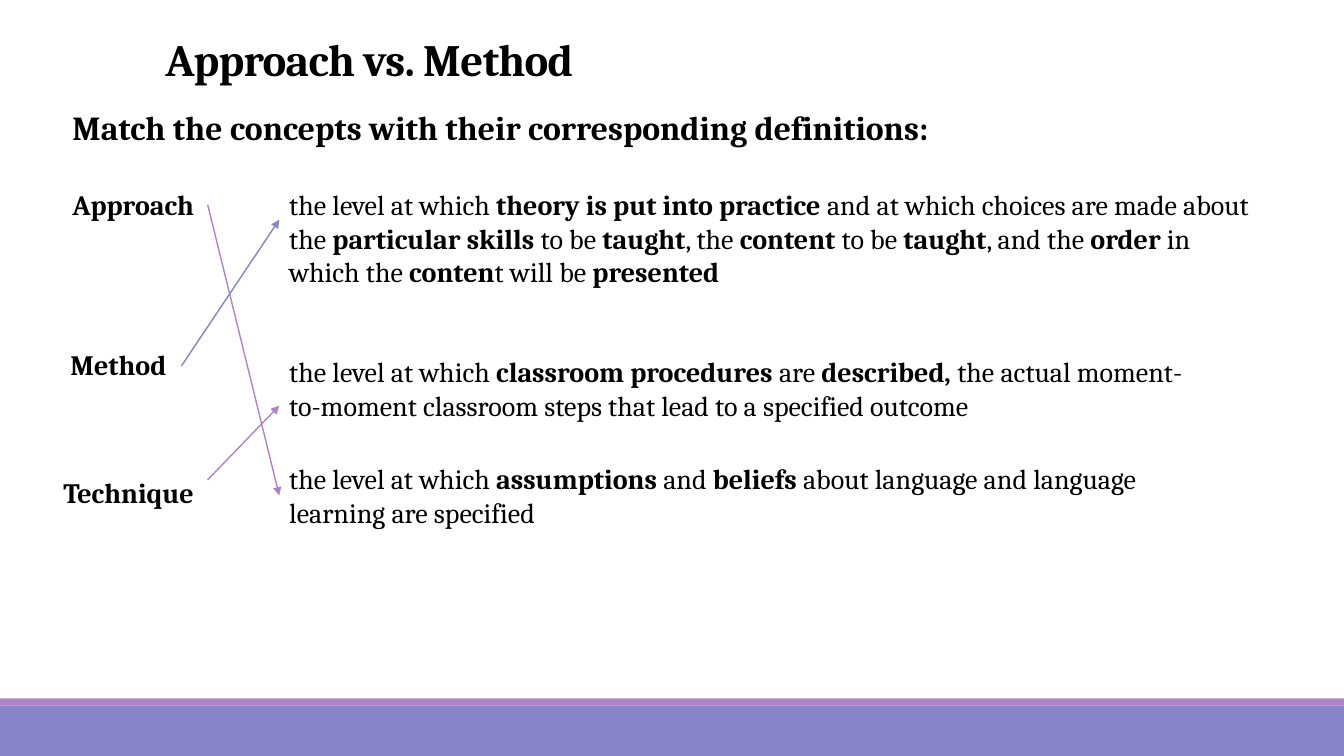
from lxml import etree
from pptx import Presentation
from pptx import util as u
from pptx.dml import color
from pptx.enum import shapes, text
from pptx.oxml import ns

FONT = "Cambria"
BLACK, BLUE, PURPLE = "000000", "8784C7", "AD84C6"

CONCEPTS = {
    "Approach": (0.62, 1.81, 1.44, 0.44),
    "Method": (0.6, 3.4, 1.36, 0.44),
    "Technique": (0.53, 4.67, 1.54, 0.44),
}
DEFINITIONS = {
    "Method": (
        "the level at which **theory is put into practice **and at which choices "
        "are made about the **particular skills** to be **taught**, the **content** "
        "to be **taught**, and the **order** in which the **conten**t will be "
        "**presented**",
        (2.77, 1.81, 9.89, 1.11),
    ),
    "Technique": (
        "the level at which **classroom procedures **are **described, **the actual "
        "moment-to-moment classroom steps that lead to a specified outcome",
        (2.77, 3.47, 9.19, 1.11),
    ),
    "Approach": (
        "the level at which **assumptions **and **beliefs** about language and "
        "language learning are specified",
        (2.77, 4.53, 8.86, 0.77),
    ),
}


def rgb(value):
    return color.RGBColor.from_string(value)


def inches(box):
    return [u.Inches(length) for length in box]


def format_run(run, size, bold):
    run.font.name = FONT
    run.font.size = u.Pt(size)
    run.font.bold = bold
    run.font.color.rgb = rgb(BLACK)


def add_text(slide, box, marked_text, size):
    shape = slide.shapes.add_textbox(*inches(box))
    shape.text_frame.word_wrap = True
    paragraph = shape.text_frame.paragraphs[0]
    for index, part in enumerate(marked_text.split("**")):
        if part:
            run = paragraph.add_run()
            run.text = part
            format_run(run, size, index % 2 == 1)
    return shape


def add_bar(slide, box, fill):
    shape = slide.shapes.add_shape(shapes.MSO_SHAPE.RECTANGLE, *inches(box))
    shape.shadow.inherit = False
    shape.fill.solid()
    shape.fill.fore_color.rgb = rgb(fill)
    shape.line.fill.background()


def add_footer(slide, box):
    left, top, width, height = box
    stripe = 0.07
    add_bar(slide, (left, top + stripe, width, height - stripe), BLUE)
    add_bar(slide, (left, top, width, stripe), PURPLE)


def add_title(slide, box):
    title = slide.shapes.title
    title.left, title.top, title.width, title.height = inches(box)
    frame = title.text_frame
    frame.text = "Approach vs. Method"
    frame.word_wrap = True
    frame.auto_size = text.MSO_AUTO_SIZE.NONE
    frame.vertical_anchor = text.MSO_ANCHOR.MIDDLE
    paragraph = frame.paragraphs[0]
    paragraph.alignment = text.PP_ALIGN.LEFT
    paragraph.line_spacing = 0.85
    run = paragraph.runs[0]
    format_run(run, 32, True)
    run._r.get_or_add_rPr().set("spc", "-50")


def add_arrow(slide, start, end, line_color):
    connector = slide.shapes.add_connector(
        shapes.MSO_CONNECTOR.STRAIGHT, *inches(start + end)
    )
    connector.line.width = u.Pt(1)
    connector.line.color.rgb = rgb(line_color)
    line = connector.line._get_or_add_ln()
    etree.SubElement(line, ns.qn("a:tailEnd"), type="triangle")
    etree.SubElement(connector._element.spPr, ns.qn("a:effectLst"))
    return connector


def add_matching(slide):
    concepts = {
        name: add_text(slide, box, f"**{name}**", 20)
        for name, box in CONCEPTS.items()
    }
    definitions = {
        name: add_text(slide, box, wording, 20)
        for name, (wording, box) in DEFINITIONS.items()
    }
    approach = add_arrow(slide, (2.06, 2.03), (2.77, 4.92), PURPLE)
    approach.begin_connect(concepts["Approach"], 3)
    approach.end_connect(definitions["Approach"], 1)
    add_arrow(slide, (1.8, 3.63), (2.77, 2.18), BLUE)
    technique = add_arrow(slide, (2.06, 4.76), (2.77, 4.03), PURPLE)
    technique.end_connect(definitions["Technique"], 1)


def main():
    presentation = Presentation()
    presentation.slide_width = u.Inches(13.33)
    presentation.slide_height = u.Inches(7.5)
    slide = presentation.slides.add_slide(presentation.slide_layouts[5])
    add_footer(slide, (0, 6.93, 13.33, 0.57))
    add_title(slide, (1.54, 0.32, 10.66, 0.61))
    add_text(
        slide,
        (0.62, 1.01, 9.12, 0.5),
        "**Match the concepts with their corresponding definitions:**",
        24,
    )
    add_matching(slide)
    presentation.save("out.pptx")


if __name__ == "__main__":
    main()
